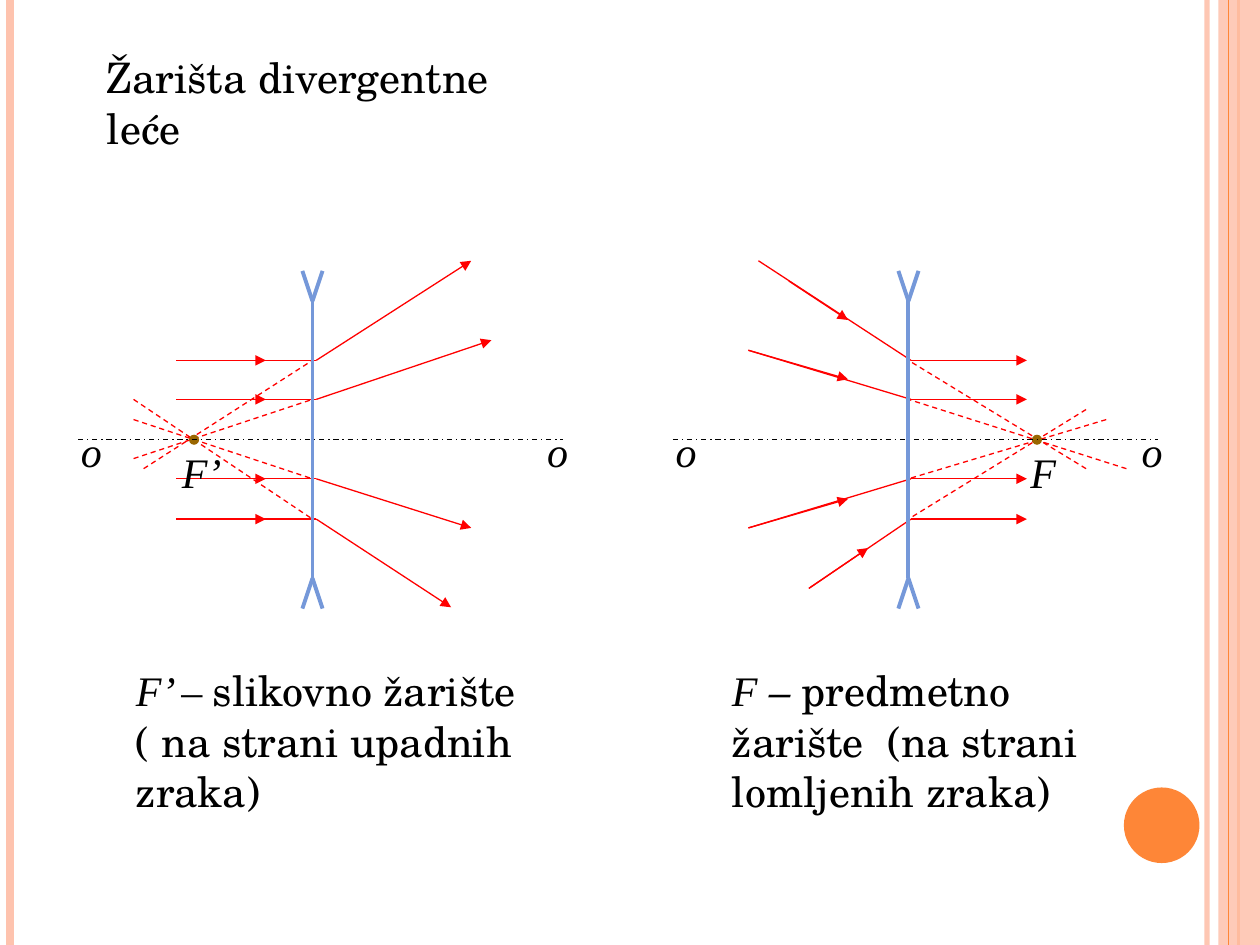
import pptx
import pptx.util
import pptx.dml.color
import pptx.enum.dml
import pptx.enum.shapes
import pptx.enum.text
import pptx.oxml.ns
from lxml import etree

Inches = pptx.util.Inches
SHAPES = pptx.enum.shapes.MSO_SHAPE
DASHES = pptx.enum.dml.MSO_LINE
ALIGN = pptx.enum.text.PP_ALIGN

RED, BLUE, BLACK, BROWN = "FF0000", "7598D9", "000000", "996600"
PEACH, ORANGE = "FEC3AE", "FE8637"
SERIF, SCHOOL = "Times New Roman", "TeX Gyre Schola"
AXIS_Y = 3.49
RAY_HEIGHTS = [2.86, 3.17, 3.8, 4.12]

BORDERS = [(9.58, PEACH, 3, 93), (0.08, PEACH, 4.5, 100), (9.83, ORANGE, 1.5, 100)]
PARAGRAPHS = [
    ((0.75, 0.36, 3.85, 0.9), [("Žarišta divergentne leće", SCHOOL, False)]),
    ((0.98, 5.22, 3.31, 1.31), [
        ("F’ – ", SERIF, True),
        ("slikovno žarište  ( na strani upadnih zraka)", SCHOOL, False)]),
    ((5.71, 5.22, 3.51, 1.31), [
        ("F", SERIF, True),
        (" – ", SCHOOL, True),
        ("predmetno žarište  (na strani lomljenih zraka)", SCHOOL, False)]),
]
REFRACTED_ENDS = [(3.74, 2.07), (3.9, 2.7), (3.74, 4.19), (3.58, 4.82)]
INCIDENT_RAYS = [
    ((6.02, 2.07), (6.26, 2.23), (6.73, 2.54)),
    ((5.94, 2.78), (5.94, 2.78), (6.73, 3.01)),
    ((5.94, 4.19), (5.94, 4.19), (6.73, 3.96)),
    ((6.42, 4.67), (6.42, 4.67), (6.89, 4.35)),
]
DIAGRAMS = [
    {"axis_left": 0.62, "lens": 2.48, "focus": 1.54, "label": ("F’", 1.34, 0.52),
     "extensions": [(1.14, 3.72), (1.06, 3.64), (1.06, 3.33), (1.06, 3.17)]},
    {"axis_left": 5.34, "lens": 7.21, "focus": 8.23, "label": ("F", 8.08, 0.4),
     "extensions": [(8.62, 3.72), (8.94, 3.72), (8.78, 3.33), (8.62, 3.25)]},
]

presentation = pptx.Presentation()
presentation.slide_width = Inches(10)
presentation.slide_height = Inches(7.5)
slide = presentation.slides.add_slide(presentation.slide_layouts[6])


def color(value):
    return pptx.dml.color.RGBColor.from_string(value)


def add_child(parent, tag, **attributes):
    return etree.SubElement(parent, pptx.oxml.ns.qn(tag), **attributes)


def set_opacity(properties, percent):
    if percent < 100:
        fill_color = next(properties.iter(pptx.oxml.ns.qn("a:srgbClr")))
        add_child(fill_color, "a:alpha", val=str(percent * 1000))


def add_line(start, end, line_color=RED, width=0.75, dash=None, arrow=False, opacity=100):
    connector = slide.shapes.add_connector(
        pptx.enum.shapes.MSO_CONNECTOR.STRAIGHT,
        *[Inches(value) for value in (*start, *end)])
    connector.line.color.rgb = color(line_color)
    connector.line.width = pptx.util.Pt(width)
    if dash:
        connector.line.dash_style = dash
    properties = connector.line._get_or_add_ln()
    set_opacity(properties, opacity)
    if arrow:
        add_child(properties, "a:tailEnd", type="triangle")
    add_child(connector._element.spPr, "a:effectLst")


def add_filled(kind, box, fill_color, opacity=100):
    shape = slide.shapes.add_shape(kind, *map(Inches, box))
    shape.shadow.inherit = False
    shape.fill.solid()
    shape.fill.fore_color.rgb = color(fill_color)
    shape.line.fill.background()
    set_opacity(shape._element.spPr, opacity)


def add_text(box, runs, wrap=True, alignment=ALIGN.LEFT):
    frame = slide.shapes.add_textbox(*map(Inches, box)).text_frame
    frame.word_wrap = wrap
    frame.vertical_anchor = pptx.enum.text.MSO_ANCHOR.MIDDLE
    paragraph = frame.paragraphs[0]
    paragraph.alignment = alignment
    for text, font, italic in runs:
        run = paragraph.add_run()
        run.text = text
        run.font.name = font
        run.font.size = pptx.util.Pt(24)
        run.font.italic = italic
        run.font.color.rgb = color(BLACK)


def add_label(text, left, top, width):
    add_text((left, top, width, 0.5), [(text, SERIF, True)], False, ALIGN.CENTER)


def add_diagram(diagram):
    left, lens, focus = diagram["axis_left"], diagram["lens"], diagram["focus"]
    text, label_left, label_width = diagram["label"]
    add_label(text, label_left, AXIS_Y, label_width)
    for outer, height in zip(diagram["extensions"], RAY_HEIGHTS):
        add_line(outer, (lens, height), dash=DASHES.DASH)
    add_filled(SHAPES.OVAL, (focus - 0.04, AXIS_Y - 0.04, 0.08, 0.08), BROWN)
    add_line((left, AXIS_Y), (left + 3.85, AXIS_Y), BLACK, dash=DASHES.DASH_DOT)
    for offset in (-0.08, 3.62):
        add_label("o", left + offset, 3.33, 0.37)
    add_line((lens, 2.38), (lens, 4.59), BLUE, 2.25)
    for tip, joint in ((2.15, 2.39), (4.83, 4.59)):
        for offset in (-0.08, 0.08):
            add_line((lens + offset, tip), (lens, joint), BLUE, 2.25)


for x, line_color, width, opacity in BORDERS:
    add_line((x, 0), (x, 7.5), line_color, width, opacity=opacity)
add_filled(SHAPES.RECTANGLE, (9.67, 0, 0.33, 7.5), PEACH, 87)
add_line((9.75, 0), (9.75, 7.5), ORANGE)
add_filled(SHAPES.OVAL, (8.92, 6.25, 0.6, 0.6), ORANGE)

for box, runs in PARAGRAPHS:
    add_text(box, runs)

for height, end in zip(RAY_HEIGHTS, REFRACTED_ENDS):
    add_line((2.51, height), end, arrow=True)
    add_line((1.4, height), (2.51, height))
    add_line((1.72, height), (2.11, height), arrow=True)

for height, (start, arrow_start, arrow_end) in zip(RAY_HEIGHTS, INCIDENT_RAYS):
    add_line((7.23, height), (8.15, height), arrow=True)
    add_line(start, (7.23, height))
    add_line(arrow_start, arrow_end, arrow=True)

for diagram in DIAGRAMS:
    add_diagram(diagram)

presentation.save("out.pptx")
